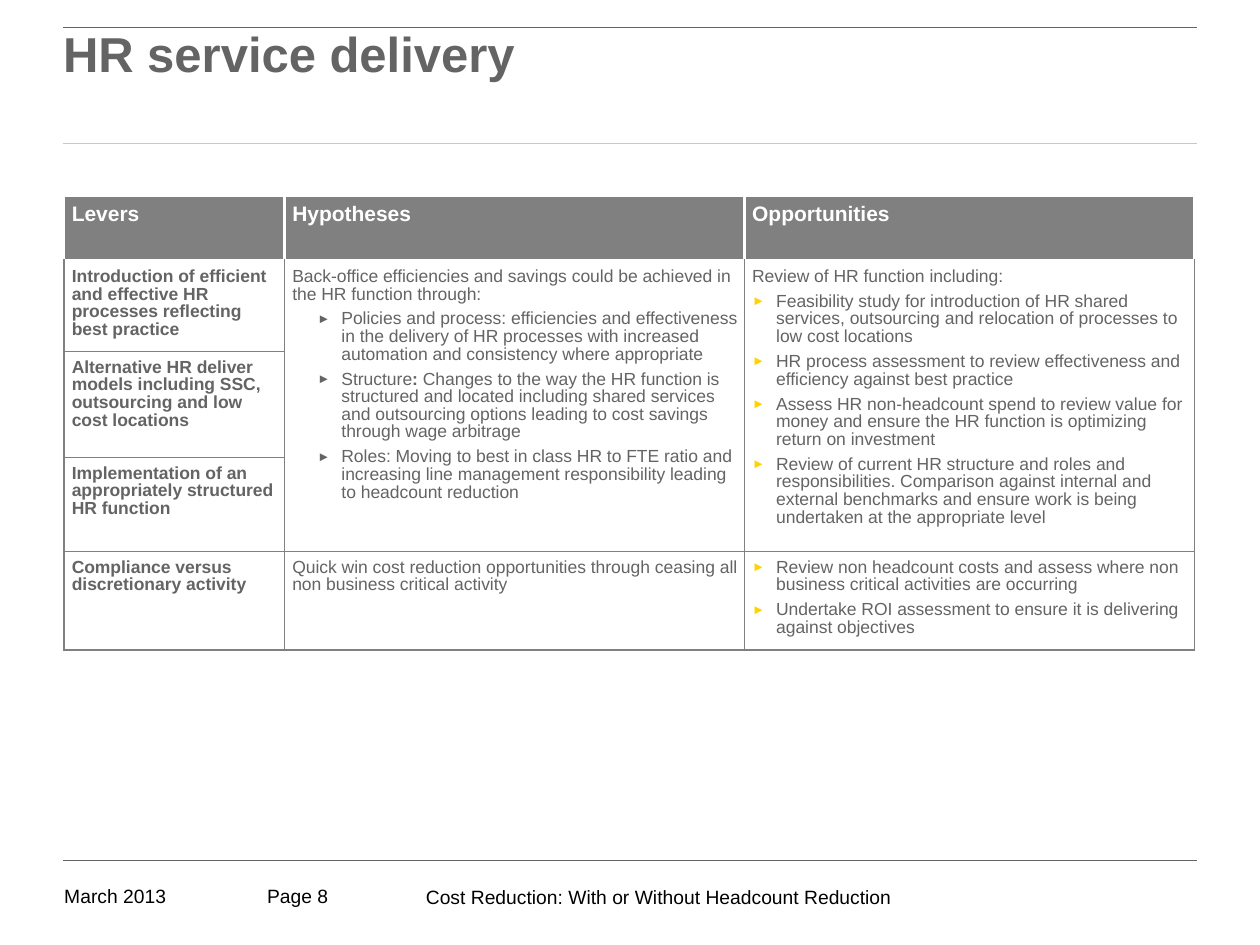
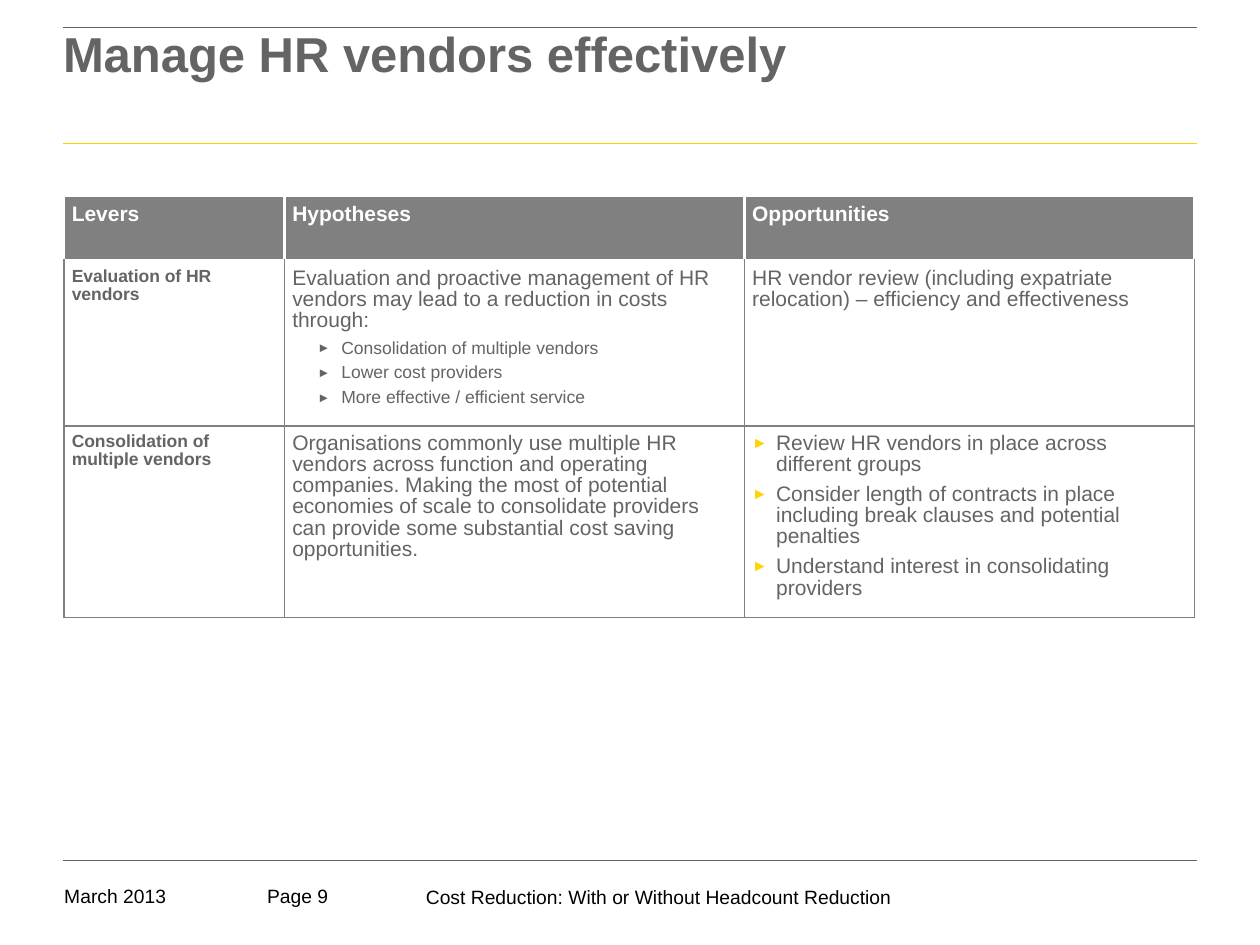
from lxml.etree import SubElement
from pptx import Presentation
from pptx.dml.color import RGBColor
from pptx.enum.shapes import MSO_CONNECTOR
from pptx.enum.text import MSO_ANCHOR, MSO_AUTO_SIZE, PP_ALIGN
from pptx.oxml.ns import qn
from pptx.util import Inches, Pt

# Shared look
FONT = "Arial"
BLACK = RGBColor(0x00, 0x00, 0x00)
WHITE = RGBColor(0xFF, 0xFF, 0xFF)
TEXT_GREY = RGBColor(0x64, 0x64, 0x64)
TABLE_GREY = RGBColor(0x80, 0x80, 0x80)
YELLOW = RGBColor(0xFF, 0xD2, 0x00)

LEFT, RIGHT = 0.5, 9.5
RULES = [(0.22, TEXT_GREY, 0.5), (1.14, YELLOW, 1), (6.83, TEXT_GREY, 0.25)]
TABLE_LEFT, TABLE_TOP = 0.51, 1.55
COLUMNS = [1.75, 3.65, 3.57]
HEADER_HEIGHT = 0.52
HEADINGS = ["Levers", "Hypotheses", "Opportunities"]

# Paragraph kinds: left indent, hanging indent, bullet colour
PLAIN = (0, 0, None)
SUB_BULLET = (0.39, -0.19, TEXT_GREY)
BULLET = (0.19, -0.19, YELLOW)


def style_run(r, size, color, bold=False):
    r.font.name = FONT
    r.font.size = Pt(size)
    r.font.color.rgb = color
    r.font.bold = bold


def add_rule(s, y, color, width):
    line = s.shapes.add_connector(MSO_CONNECTOR.STRAIGHT, Inches(LEFT),
                                  Inches(y), Inches(RIGHT), Inches(y))
    line.line.color.rgb = color
    line.line.width = Pt(width)
    SubElement(line._element.spPr, qn("a:effectLst"))


def add_footer(s, page):
    parts = [(0.51, 7.02, 1.41, 0.16, "March 2013"),
             (2.12, 7.02, 0.73, 0.22, f"Page {page}"),
             (3.38, 7.03, 3.91, 0.2,
              "Cost Reduction: With or Without Headcount Reduction")]
    for x, y, w, h, text in parts:
        box = s.shapes.add_textbox(Inches(x), Inches(y), Inches(w), Inches(h))
        tf = box.text_frame
        tf.word_wrap = True
        tf.margin_left = tf.margin_right = tf.margin_top = tf.margin_bottom = 0
        tf.text = text
        style_run(tf.paragraphs[0].runs[0], 11, BLACK)


def set_title(s, text):
    title = s.shapes.title
    title.left, title.top = Inches(LEFT), Inches(0.22)
    title.width, title.height = Inches(RIGHT - LEFT), Inches(0.94)
    tf = title.text_frame
    tf.auto_size = MSO_AUTO_SIZE.NONE
    tf.vertical_anchor = MSO_ANCHOR.TOP
    tf.margin_left = tf.margin_right = tf.margin_bottom = 0
    tf.margin_top = Inches(0.04)
    tf.text = text
    p = tf.paragraphs[0]
    p.alignment = PP_ALIGN.LEFT
    p.line_spacing = 0.85
    style_run(p.runs[0], 28, TEXT_GREY, True)


def set_borders(cell, **sides):
    """Draw the sides L, R, T and B, each given as (colour, width)."""
    tc_pr = cell._tc.get_or_add_tcPr()
    for side in "LRTB":
        color, width = sides[side]
        ln = SubElement(tc_pr, qn(f"a:ln{side}"), w=str(Pt(width)))
        fill = SubElement(ln, qn("a:solidFill"))
        SubElement(fill, qn("a:srgbClr"), val=str(color))


def set_indent(p, indent, hanging, bullet_color):
    p_pr = p._p.get_or_add_pPr()
    p_pr.set("marL", str(Inches(indent)))
    p_pr.set("indent", str(Inches(hanging)))
    if bullet_color is not None:
        color = SubElement(p_pr, qn("a:buClr"))
        SubElement(color, qn("a:srgbClr"), val=str(bullet_color))
        SubElement(p_pr, qn("a:buSzPct"), val="75000")
        SubElement(p_pr, qn("a:buFont"), typeface=FONT)
        SubElement(p_pr, qn("a:buChar"), char="►")


def format_cell(cell, fill, borders):
    cell.margin_left = cell.margin_right = Inches(0.06)
    cell.margin_top = cell.margin_bottom = Inches(0.06)
    cell.vertical_anchor = MSO_ANCHOR.TOP
    set_borders(cell, **borders)
    cell.fill.solid()
    cell.fill.fore_color.rgb = fill


def fill_cell(cell, paragraphs):
    """Write (kind, size, text) paragraphs; ** switches bold on and off."""
    tf = cell.text_frame
    for i, (kind, size, text) in enumerate(paragraphs):
        p = tf.paragraphs[0] if i == 0 else tf.add_paragraph()
        set_indent(p, *kind)
        p.line_spacing = 0.9
        p.space_before = Pt(0.21 * size if i else 0)
        p.space_after = Pt(0.21 * size)
        for j, part in enumerate(text.split("**")):
            if part:
                r = p.add_run()
                r.text = part
                style_run(r, size, TEXT_GREY, j % 2 == 1)


def add_lever_table(s, x, y, heights, rows, merged_rows=1):
    """Table of levers; the first merged_rows share their other two cells."""
    all_heights = [HEADER_HEIGHT] + heights
    frame = s.shapes.add_table(len(all_heights), len(COLUMNS), Inches(x), Inches(y),
                               Inches(sum(COLUMNS)), Inches(sum(all_heights)))
    table = frame.table
    table.horz_banding = False
    for column, width in zip(table.columns, COLUMNS):
        column.width = Inches(width)
    for row, height in zip(table.rows, all_heights):
        row.height = Inches(height)

    # Header row
    thick, thin = (WHITE, 2.25), (TABLE_GREY, 1)
    for c, heading in enumerate(HEADINGS):
        cell = table.cell(0, c)
        edge = thick if c else (WHITE, 1)
        format_cell(cell, TABLE_GREY, dict(L=edge, R=thick, T=thick, B=thick))
        cell.text_frame.text = heading
        style_run(cell.text_frame.paragraphs[0].runs[0], 12, WHITE, True)

    # Body rows
    for r, (lever, *others) in enumerate(rows, 1):
        contents = [[(PLAIN, 10, f"**{lever}**")]] + others
        for c in range(len(COLUMNS)):
            top = thick if r == 1 else thin
            format_cell(table.cell(r, c), WHITE, dict(L=thin, R=thin, T=top, B=thin))
        for c, paragraphs in enumerate(contents):
            fill_cell(table.cell(r, c), paragraphs)
    if merged_rows > 1:
        for c in (1, 2):
            table.cell(1, c).merge(table.cell(merged_rows, c))


def add_lever_slide(prs, page, title, heights, rows, merged_rows=1):
    s = prs.slides.add_slide(prs.slide_layouts[5])
    add_footer(s, page)
    for rule in RULES:
        add_rule(s, *rule)
    set_title(s, title)
    add_lever_table(s, TABLE_LEFT, TABLE_TOP, heights, rows, merged_rows)


DELIVERY_ROWS = [
    ("Introduction of efficient and effective HR processes reflecting best practice",
     [(PLAIN, 10, "Back-office efficiencies and savings could be achieved in the HR "
       "function through:"),
      (SUB_BULLET, 10, "Policies and process: efficiencies and effectiveness in the "
       "delivery of HR processes with increased automation and consistency where "
       "appropriate"),
      (SUB_BULLET, 10, "Structure**: **Changes to the way the HR function is structured "
       "and located including shared services and outsourcing options leading to cost "
       "savings through wage arbitrage"),
      (SUB_BULLET, 10, "Roles: Moving to best in class HR to FTE ratio and increasing "
       "line management responsibility leading to headcount reduction")],
     [(PLAIN, 10, "Review of HR function including:"),
      (BULLET, 10, "Feasibility study for introduction of HR shared services, "
       "outsourcing and relocation of processes to low cost locations"),
      (BULLET, 10, "HR process assessment to review effectiveness and efficiency "
       "against best practice"),
      (BULLET, 10, "Assess HR non-headcount spend to review value for money and ensure "
       "the HR function is optimizing return on investment"),
      (BULLET, 10, "Review of current HR structure and roles and responsibilities. "
       "Comparison against internal and external benchmarks and ensure work is being "
       "undertaken at the appropriate level")]),
    ("Alternative HR deliver models including SSC, outsourcing and low cost locations",),
    ("Implementation of an appropriately structured HR function",),
    ("Compliance versus discretionary activity",
     [(PLAIN, 10, "Quick win cost reduction opportunities through ceasing all non "
       "business critical activity")],
     [(BULLET, 10, "Review non headcount costs and assess where non business critical "
       "activities are occurring"),
      (BULLET, 10, "Undertake ROI assessment to ensure it is delivering against "
       "objectives")]),
]

VENDOR_ROWS = [
    ("Evaluation of HR vendors",
     [(PLAIN, 12, "Evaluation and proactive management of HR vendors may lead to a "
       "reduction in costs through:"),
      (SUB_BULLET, 10, "Consolidation of multiple vendors"),
      (SUB_BULLET, 10, "Lower cost providers"),
      (SUB_BULLET, 10, "More effective / efficient service")],
     [(PLAIN, 12, "HR vendor review (including expatriate relocation) – efficiency and "
       "effectiveness")]),
    ("Consolidation of multiple vendors",
     [(PLAIN, 12, "Organisations commonly use multiple HR vendors across function and "
       "operating companies. Making the most of potential economies of scale to "
       "consolidate providers can provide some substantial cost saving "
       "opportunities.")],
     [(BULLET, 12, "Review HR vendors in place across different groups"),
      (BULLET, 12, "Consider length of contracts in place including break clauses and "
       "potential penalties"),
      (BULLET, 12, "Understand interest in consolidating providers")]),
]


def main():
    prs = Presentation()
    prs.slide_width, prs.slide_height = Inches(10), Inches(7.5)
    add_lever_slide(prs, 8, "HR service delivery", [0.71, 0.84, 0.61, 0.73],
                    DELIVERY_ROWS, merged_rows=3)
    add_lever_slide(prs, 9, "Manage HR vendors effectively", [1.31, 1.43], VENDOR_ROWS)
    prs.save("out.pptx")


if __name__ == "__main__":
    main()
